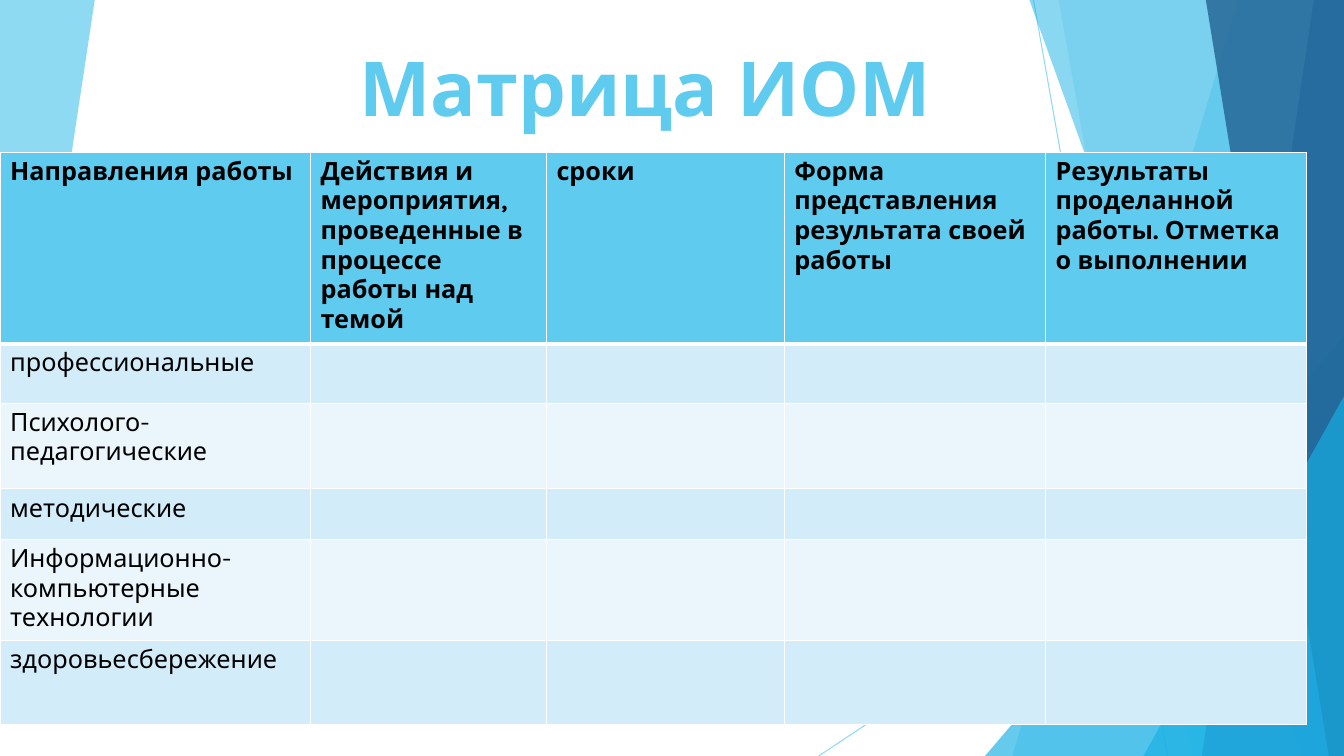
from lxml.etree import SubElement
from pptx import Presentation
from pptx.dml.color import RGBColor
from pptx.enum.shapes import MSO_CONNECTOR, MSO_SHAPE
from pptx.enum.text import MSO_ANCHOR, PP_ALIGN
from pptx.oxml.ns import qn
from pptx.util import Inches, Pt

WIDE, HIGH = 13.33, 7.5
FONT = "Karla"
HUES = {
    "sky": "5FCBEF", "aqua": "17B0E4", "blue": "2E83C3", "navy": "226292",
    "pale": "D2ECF9", "mist": "EAF6FC", "white": "FFFFFF", "black": "000000",
}

TITLE = "Матрица ИОМ"
HEADS = [
    "Направления работы",
    "Действия и мероприятия, проведенные в процессе работы над темой",
    "сроки",
    "Форма представления\nрезультата своей работы",
    "Результаты проделанной работы. Отметка о выполнении",
]
TOPICS = [
    "профессиональные",
    "Психолого-педагогические",
    "методические",
    "Информационно-компьютерные технологии",
    "здоровьесбережение",
]
COLS = [3.08, 2.34, 2.36, 2.59, 2.59]
ROWS = [1.88, 0.59, 0.85, 0.5, 0.99, 0.84]
TABLE_TOP = 1.51

DECOR = [
    ("left", (0.94, 6.22), "sky", 70),
    ("line", (10.25, 0, 11.58, HIGH), "sky", 70),
    ("line", (WIDE, 4.03, 8.12, HIGH), "sky", 70),
    ("band", (12.28, 10.04), "sky", 36),
    ("band", (10.5, 11.83), "sky", 20),
    ("wedge", (9.77, 3.33), "aqua", 66),
    ("band", (10.21, 12.91), "aqua", 50),
    ("band", (13.03, 11.92), "blue", 70),
    ("band", (11.96, 13.18), "navy", 80),
    ("wedge", (11.34, 3.93), "aqua", 66),
]


def hue(name):
    return RGBColor.from_string(HUES[name])


def fade(shape, share):
    tint = next(shape.element.iter(qn("a:srgbClr")))
    SubElement(tint, qn("a:alpha"), val=str(share * 1000))


def paint(shape, name, share):
    shape.shadow.inherit = False
    shape.fill.solid()
    shape.fill.fore_color.rgb = hue(name)
    shape.line.fill.background()
    fade(shape, share)


def add_area(shapes, points):
    spots = [(Inches(x), Inches(y)) for x, y in points]
    build = shapes.build_freeform(*spots[0], scale=1.0)
    build.add_line_segments(spots[1:], close=True)
    return build.convert_to_shape()


def add_wedge(shapes, left, top):
    box = map(Inches, (left, top, WIDE - left, HIGH - top))
    wedge = shapes.add_shape(MSO_SHAPE.ISOSCELES_TRIANGLE, *box)
    wedge.adjustments[0] = 1.0
    return wedge


def add_line(shapes, ends, name, share):
    line = shapes.add_connector(MSO_CONNECTOR.STRAIGHT, *map(Inches, ends))
    line.line.color.rgb = hue(name)
    line.line.width = Pt(0.75)
    fade(line, share)
    SubElement(line.element.spPr, qn("a:effectLst"))


def add_decor(shapes):
    for kind, spot, name, share in DECOR:
        if kind == "line":
            add_line(shapes, spot, name, share)
            continue
        if kind == "wedge":
            shape = add_wedge(shapes, *spot)
        elif kind == "left":
            edge, low = spot
            shape = add_area(shapes, [(0, 0), (edge, 0), (0, low)])
        else:
            top, base = spot
            shape = add_area(
                shapes, [(top, 0), (WIDE, 0), (WIDE, HIGH), (base, HIGH)])
        paint(shape, name, share)


def style(frame, size, name, bold):
    for para in frame.paragraphs:
        for run in para.runs:
            run.font.name = FONT
            run.font.size = Pt(size)
            run.font.bold = bold
            run.font.color.rgb = hue(name)


def add_title(shapes):
    box = shapes.add_textbox(*map(Inches, (0.9, 0.35, 11, 1.01)))
    frame = box.text_frame
    frame.word_wrap = True
    frame.vertical_anchor = MSO_ANCHOR.BOTTOM
    frame.text = TITLE
    frame.paragraphs[0].alignment = PP_ALIGN.CENTER
    style(frame, 54, "sky", True)


def edge(cell, side, width):
    line = SubElement(cell._tc.get_or_add_tcPr(), qn("a:" + side),
                      w=str(Pt(width)))
    fill = SubElement(line, qn("a:solidFill"))
    SubElement(fill, qn("a:srgbClr"), val=HUES["white"])


def add_matrix(shapes):
    box = map(Inches, (0, TABLE_TOP, sum(COLS), sum(ROWS)))
    table = shapes.add_table(len(ROWS), len(COLS), *box).table
    for col, width in zip(table.columns, COLS):
        col.width = Inches(width)
    for row, height in zip(table.rows, ROWS):
        row.height = Inches(height)
    blanks = [""] * (len(COLS) - 1)
    grid = [HEADS] + [[topic] + blanks for topic in TOPICS]
    for r, texts in enumerate(grid):
        tint = "sky" if r == 0 else ("mist", "pale")[r % 2]
        for c, text in enumerate(texts):
            cell = table.cell(r, c)
            edge(cell, "lnL", 1)
            edge(cell, "lnR", 1)
            edge(cell, "lnT", 3 if r == 1 else 1)
            edge(cell, "lnB", 3 if r == 0 else 1)
            cell.fill.solid()
            cell.fill.fore_color.rgb = hue(tint)
            cell.text_frame.text = text
            style(cell.text_frame, 18, "black", r == 0)


def main():
    deck = Presentation()
    deck.slide_width, deck.slide_height = Inches(WIDE), Inches(HIGH)
    slide = deck.slides.add_slide(deck.slide_layouts[6])
    add_decor(slide.shapes)
    add_title(slide.shapes)
    add_matrix(slide.shapes)
    deck.save("out.pptx")


if __name__ == "__main__":
    main()
